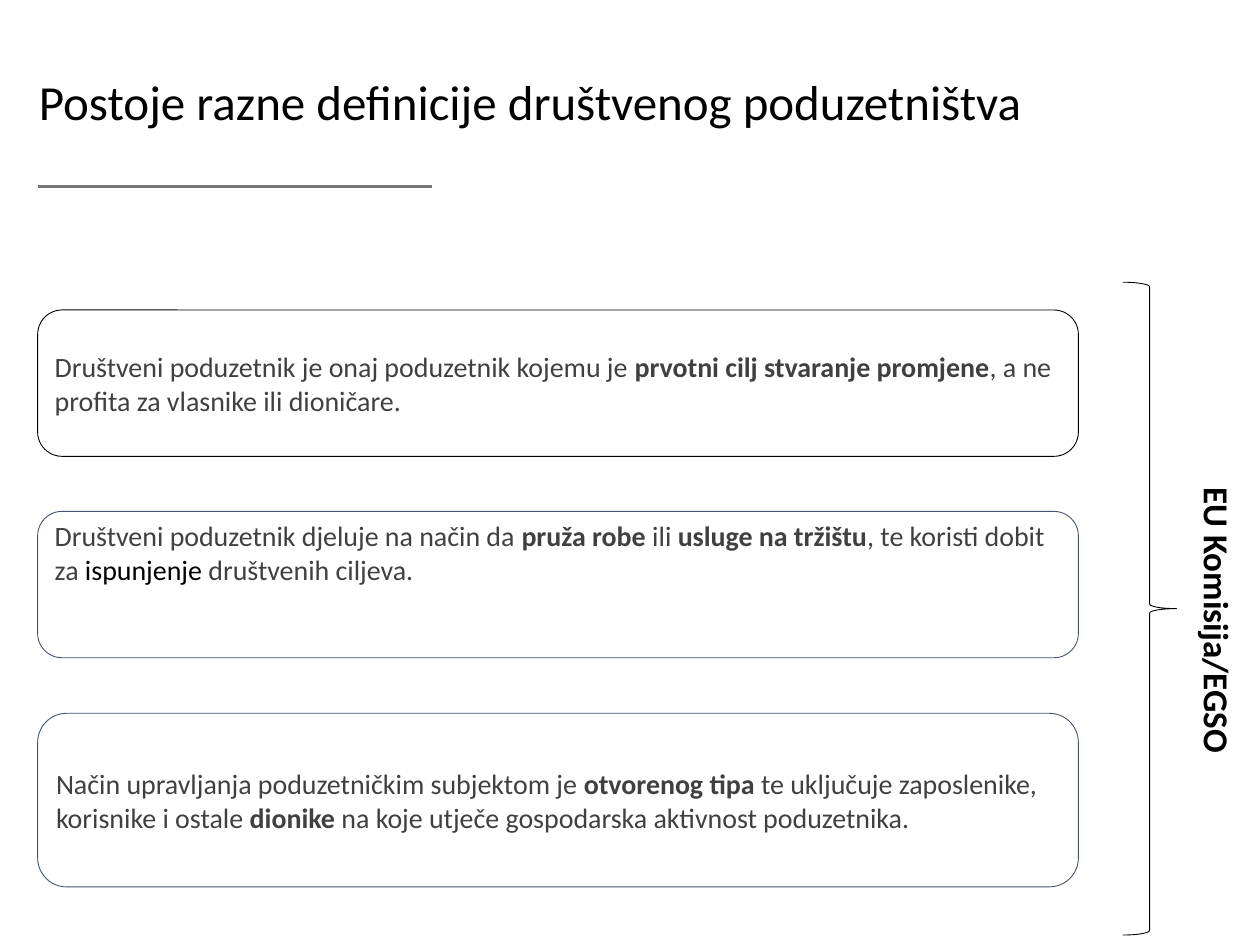
import dataclasses

import pptx
import pptx.dml.color
import pptx.enum.shapes
import pptx.enum.text
import pptx.oxml
import pptx.oxml.ns
import pptx.util

Cm = pptx.util.Cm
Pt = pptx.util.Pt
SHAPES = pptx.enum.shapes.MSO_SHAPE
ANCHOR = pptx.enum.text.MSO_ANCHOR
ALIGN = pptx.enum.text.PP_ALIGN

FONT = "Calibri"
COLORS = {"black": "000000", "body": "404040", "slate": "44546A", "rule": "777877"}
BOX_LEFT, BOX_WIDTH = 0.76, 20.98


@dataclasses.dataclass
class Piece:
    text: str
    bold: bool = False
    color: str = "body"


@dataclasses.dataclass
class Definition:
    top: float
    height: float
    outline: str
    anchor: ANCHOR
    pieces: list[Piece]


DEFINITIONS = [
    Definition(6.25, 2.95, "black", ANCHOR.MIDDLE, [
        Piece("Društveni poduzetnik je onaj poduzetnik kojemu je "),
        Piece("prvotni cilj stvaranje promjene", bold=True),
        Piece(", a ne profita za vlasnike ili dioničare."),
    ]),
    Definition(10.31, 2.95, "slate", ANCHOR.TOP, [
        Piece("Društveni poduzetnik djeluje na način da "),
        Piece("pruža robe ", bold=True),
        Piece("ili "),
        Piece("usluge na tržištu", bold=True),
        Piece(", te koristi dobit za "),
        Piece("ispunjenje", color="black"),
        Piece(" društvenih ciljeva."),
    ]),
    Definition(14.38, 3.5, "slate", ANCHOR.MIDDLE, [
        Piece("Način upravljanja poduzetničkim subjektom je "),
        Piece("otvorenog tipa ", bold=True),
        Piece("te uključuje zaposlenike, korisnike i ostale "),
        Piece("dionike", bold=True),
        Piece(" na koje utječe gospodarska aktivnost poduzetnika."),
    ]),
]


def rgb(name: str) -> pptx.dml.color.RGBColor:
    return pptx.dml.color.RGBColor.from_string(COLORS[name])


def set_font(font, size: float, color: str = "black", bold: bool = False) -> None:
    font.name, font.size, font.bold = FONT, Pt(size), bold
    font.color.rgb = rgb(color)


def add_outline(slide, preset, left: float, top: float, width: float, height: float, color: str):
    """Add an unfilled preset shape with a thin line."""
    shape = slide.shapes.add_shape(preset, Cm(left), Cm(top), Cm(width), Cm(height))
    shape.shadow.inherit = False
    shape.fill.background()
    shape.line.color.rgb = rgb(color)
    shape.line.width = Pt(0.5)
    return shape


def add_definition(slide, definition: Definition) -> None:
    box = add_outline(slide, SHAPES.ROUNDED_RECTANGLE, BOX_LEFT, definition.top,
                      BOX_WIDTH, definition.height, definition.outline)
    frame = box.text_frame
    frame.word_wrap = True
    frame.vertical_anchor = definition.anchor
    frame.margin_left = Cm(0.2)
    frame.margin_top = frame.margin_right = frame.margin_bottom = 0
    paragraph = frame.paragraphs[0]
    paragraph.alignment = ALIGN.LEFT
    for piece in definition.pieces:
        run = paragraph.add_run()
        run.text = piece.text
        set_font(run.font, 16, piece.color, piece.bold)


def add_title(slide, text: str) -> None:
    title = slide.shapes.title
    title.left, title.top, title.width, title.height = Cm(0.53), Cm(0.58), Cm(24.87), Cm(2.92)
    title.text_frame.text = text
    title.text_frame.vertical_anchor = ANCHOR.MIDDLE
    paragraph = title.text_frame.paragraphs[0]
    paragraph.alignment = ALIGN.LEFT
    set_font(paragraph.font, 28)


def add_title_rule(slide) -> None:
    y = Cm(3.76)
    rule = slide.shapes.add_connector(pptx.enum.shapes.MSO_CONNECTOR.STRAIGHT,
                                      Cm(BOX_LEFT), y, Cm(8.71), y)
    rule.line.color.rgb = rgb("rule")
    rule.line.width = Pt(2)
    properties = rule._element.spPr
    properties.append(pptx.oxml.parse_xml(f"<a:effectLst {pptx.oxml.ns.nsdecls('a')}/>"))


def add_source_label(slide, text: str) -> None:
    """Add the label that reads downwards beside the brace."""
    label = slide.shapes.add_textbox(Cm(23.55), Cm(7.9), Cm(1.55), Cm(9.2))
    frame = label.text_frame
    frame.word_wrap = True
    frame._txBody.bodyPr.set("vert", "vert")
    paragraph = frame.paragraphs[0]
    paragraph.text = text
    paragraph.alignment = ALIGN.CENTER
    set_font(paragraph.font, 20, bold=True)


def main() -> None:
    presentation = pptx.Presentation()
    presentation.slide_width, presentation.slide_height = Cm(25.4), Cm(19.05)
    slide = presentation.slides.add_slide(presentation.slide_layouts[5])
    add_title(slide, "Postoje razne definicije društvenog poduzetništva")
    add_title_rule(slide)
    for definition in DEFINITIONS:
        add_definition(slide, definition)
    add_outline(slide, SHAPES.RIGHT_BRACE, 22.63, 5.69, 1.09, 13.16, "black")
    add_source_label(slide, "EU Komisija/EGSO")
    presentation.save("out.pptx")


if __name__ == "__main__":
    main()
